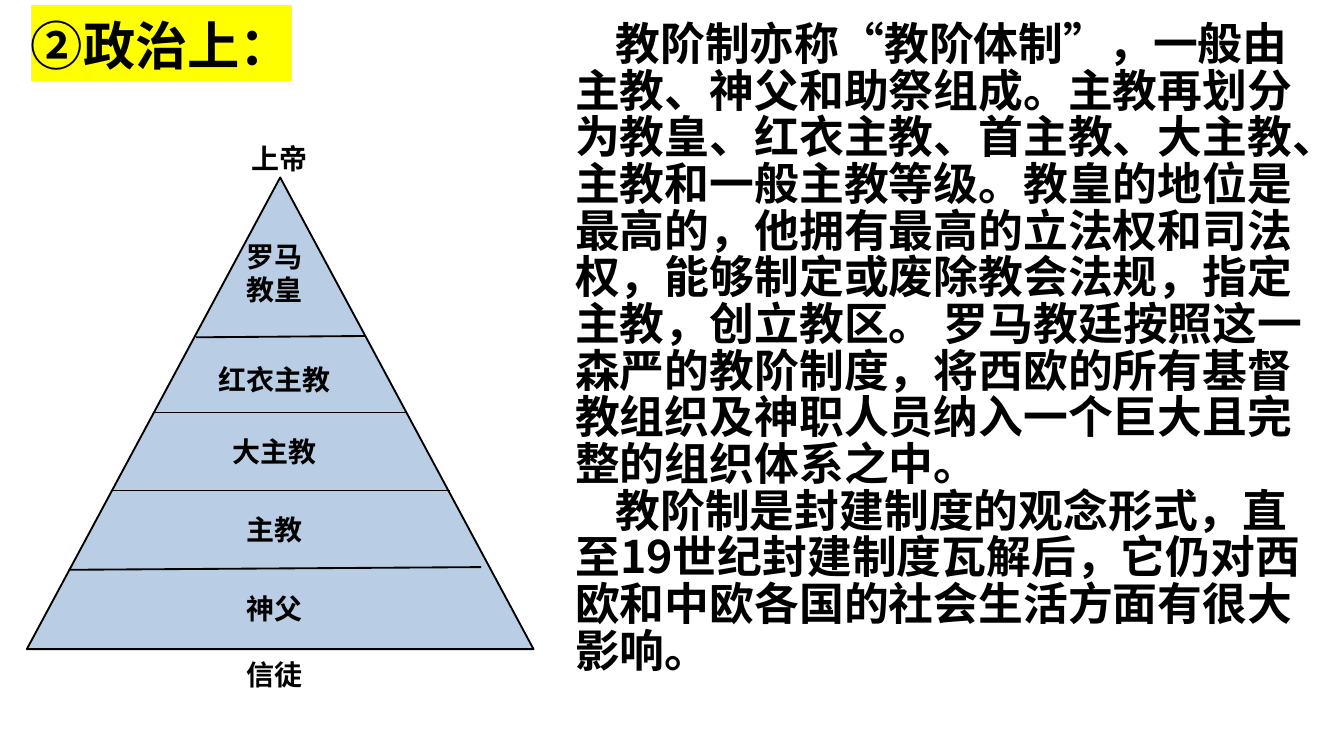
from lxml.etree import SubElement
from pptx import Presentation
from pptx.dml.color import RGBColor
from pptx.enum.shapes import MSO_CONNECTOR, MSO_SHAPE
from pptx.enum.text import MSO_AUTO_SIZE, PP_ALIGN
from pptx.oxml.ns import qn
from pptx.util import Inches, Pt

BLACK = RGBColor(0, 0, 0)
YELLOW = RGBColor(0xFF, 0xFF, 0)
PALE_BLUE = RGBColor(0xB9, 0xCD, 0xE5)
FONT = "Noto Sans CJK SC"

TITLE = ["②政治上："]
BODY = [
    "教阶制亦称“教阶体制”，一般由主教、神父和助祭组成。主教再划分为教皇、红衣主教、首主教、大主教、主教和一般主教等级。"
    "教皇的地位是最高的，他拥有最高的立法权和司法权，能够制定或废除教会法规，指定主教，创立教区。 "
    "罗马教廷按照这一森严的教阶制度，将西欧的所有基督教组织及神职人员纳入一个巨大且完整的组织体系之中。",
    "教阶制是封建制度的观念形式，直至19世纪封建制度瓦解后，它仍对西欧和中欧各国的社会生活方面有很大影响。",
]
LEVELS = [
    (["上帝"], 1.41, 1.01),
    (["罗马", "教皇"], 1.37, 1.74),
    (["红衣主教"], 1.37, 2.66),
    (["大主教"], 1.37, 3.19),
    (["主教"], 1.37, 3.77),
    (["神父"], 1.37, 4.36),
    (["信徒"], 1.37, 4.85),
]
DIVIDERS = [
    (1.46, 2.51, 2.72, 2.5),
    (1.14, 3.07, 3.02, 3.07),
    (0.83, 3.65, 3.35, 3.65),
    (0.51, 4.24, 3.58, 4.22),
]
LABEL_WIDTH, LINE_HEIGHT, LABEL_PADDING = 1.34, 0.25, 0.08

prs = Presentation()
prs.slide_width = Inches(10)
prs.slide_height = prs.slide_width * 9 // 16
s = prs.slides.add_slide(prs.slide_layouts[6])


def add_text(lines, box, size, align=None, spacing=None, indent=0, highlight=None):
    sp = s.shapes.add_textbox(*map(Inches, box))
    tf = sp.text_frame
    tf.word_wrap = True
    tf.auto_size = MSO_AUTO_SIZE.SHAPE_TO_FIT_TEXT
    tf.margin_left = tf.margin_right = Inches(0.07)
    tf.margin_top = tf.margin_bottom = Inches(0.04)
    for i, line in enumerate(lines):
        p = tf.add_paragraph() if i else tf.paragraphs[0]
        p.alignment = align
        p.line_spacing = spacing
        if indent:
            p._p.get_or_add_pPr().set("indent", str(Inches(indent)))
        r = p.add_run()
        r.text = line
        r.font.size, r.font.bold = Pt(size), True
        r.font.color.rgb = BLACK
        rPr = r._r.get_or_add_rPr()
        if highlight:
            mark = SubElement(rPr, qn("a:highlight"))
            SubElement(mark, qn("a:srgbClr")).set("val", str(highlight))
        r.font.name = FONT
        SubElement(rPr, qn("a:ea")).set("typeface", FONT)


add_text(BODY, (4.21, 0.13, 5.69, 4.98), 24, spacing=Pt(25), indent=0.3)
add_text(TITLE, (0.16, 0.06, 9.41, 0.55), 28, align=PP_ALIGN.JUSTIFY, highlight=YELLOW)

pyramid = s.shapes.add_shape(
    MSO_SHAPE.FLOWCHART_EXTRACT, *map(Inches, (0.2, 1.32, 3.77, 3.51)))
pyramid.shadow.inherit = False
pyramid.fill.solid()
pyramid.fill.fore_color.rgb = PALE_BLUE
pyramid.line.color.rgb = BLACK
pyramid.line.width = Pt(1)

for ends in DIVIDERS:
    divider = s.shapes.add_connector(MSO_CONNECTOR.STRAIGHT, *map(Inches, ends))
    divider.line.color.rgb = BLACK
    divider.line.width = Pt(1)
    SubElement(divider._element.spPr, qn("a:effectLst"))

for lines, left, top in LEVELS:
    height = LINE_HEIGHT * len(lines) + LABEL_PADDING
    add_text(lines, (left, top, LABEL_WIDTH, height), 15, align=PP_ALIGN.CENTER)

prs.save("out.pptx")
